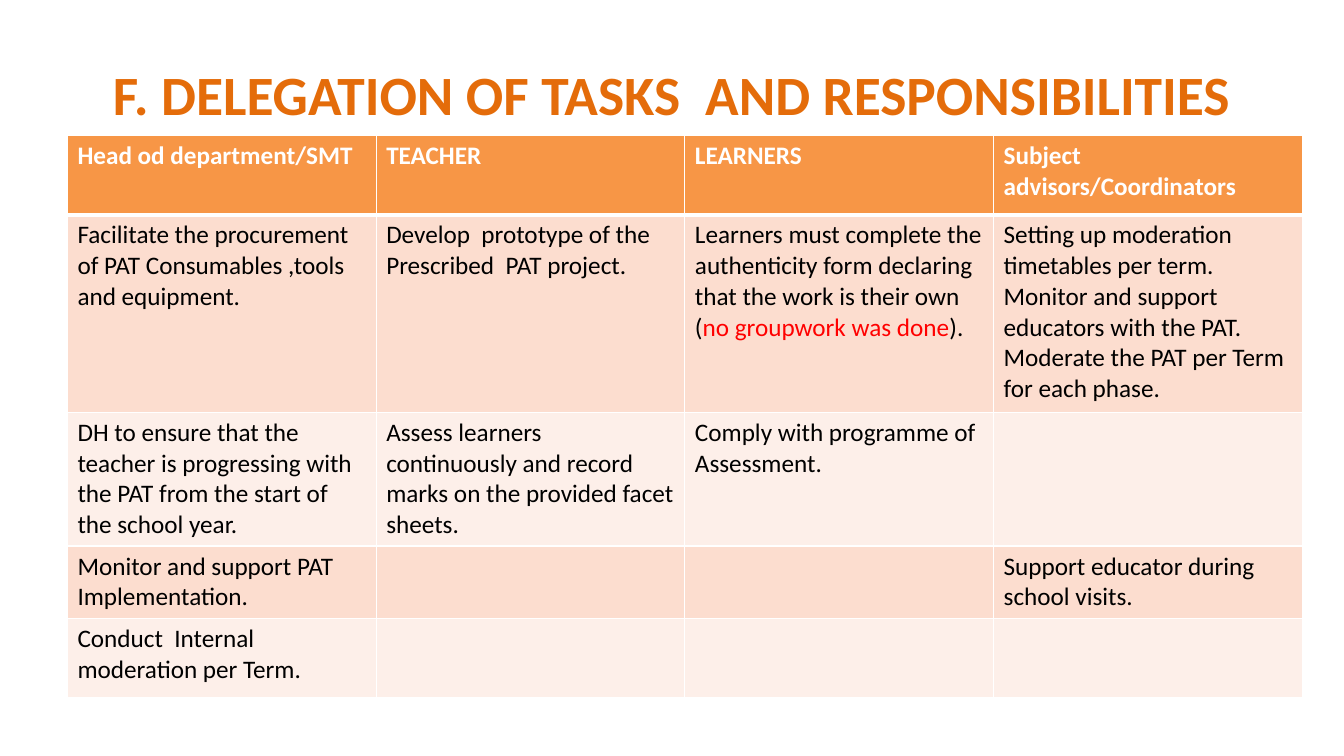
from dataclasses import dataclass

from lxml import etree
from pptx import Presentation
from pptx.dml.color import RGBColor
from pptx.enum.text import MSO_ANCHOR, PP_ALIGN
from pptx.oxml.ns import qn
from pptx.util import Cm, Pt

CENTER = PP_ALIGN.CENTER
MIDDLE = MSO_ANCHOR.MIDDLE
BLANK_LAYOUT = 6

TITLE = "F. DELEGATION OF TASKS  AND RESPONSIBILITIES"
ROLES = ["Head od department/SMT", "TEACHER", "LEARNERS", "Subject advisors/Coordinators"]
DUTIES = [
    [
        "Facilitate the procurement of PAT Consumables ,tools and equipment.",
        "Develop  prototype of the\nPrescribed  PAT project.",
        "Learners must complete the authenticity form declaring that the work is "
        "their own (|no groupwork was done|).",
        "Setting up moderation timetables per term.\n"
        "Monitor and support educators with the PAT.\n"
        "Moderate the PAT per Term for each phase.",
    ],
    [
        "DH to ensure that the teacher is progressing with the PAT from the start "
        "of the school year.",
        "Assess learners continuously and record marks on the provided facet sheets.",
        "Comply with programme of  Assessment.",
        "",
    ],
    ["Monitor and support PAT Implementation.", "", "", "Support educator during school visits."],
    ["Conduct  Internal moderation per Term.", "", "", ""],
]
ROW_HEIGHTS = [2, 4.98, 3.37, 1.82, 2]
COLUMN_WIDTH = 7.78


@dataclass(frozen=True)
class Theme:
    """Fonts, type sizes, line widths and colours of the slide."""

    font: str = "Calibri"
    title_size: float = 39.6
    table_size: float = 18
    rule: float = 1
    header_rule: float = 3
    title: str = "E46C0A"
    header: str = "F79646"
    bands: tuple = ("FCDDCF", "FDEFE9")
    light: str = "FFFFFF"
    ink: str = "000000"
    alert: str = "FF0000"


class SlideBuilder:
    """Draws styled elements on the current slide."""

    def __init__(self, slide, theme):
        self.slide = slide
        self.theme = theme

    def style(self, run, size, color, bold=False):
        """Format one run of text."""
        run.font.name = self.theme.font
        run.font.size = Pt(size)
        run.font.bold = bold
        run.font.color.rgb = RGBColor.from_string(color)

    def title(self, text, left, top, width, height):
        """Place the centred slide heading."""
        box = self.slide.shapes.add_textbox(Cm(left), Cm(top), Cm(width), Cm(height))
        frame = box.text_frame
        frame.word_wrap = True
        frame.vertical_anchor = MIDDLE
        frame.text = text
        heading = frame.paragraphs[0]
        heading.alignment = CENTER
        self.style(heading.runs[0], self.theme.title_size, self.theme.title, True)

    def border(self, cell, side, width):
        """Rule one side of a cell."""
        line = etree.SubElement(cell._tc.get_or_add_tcPr(), qn(f"a:ln{side}"), w=str(Pt(width)))
        fill = etree.SubElement(line, qn("a:solidFill"))
        etree.SubElement(fill, qn("a:srgbClr"), val=self.theme.light)

    def cell(self, cell, text, fill, color, bold, top_rule, bottom_rule):
        """Fill a cell, with text between bars in the alert colour."""
        theme = self.theme
        rules = {"L": theme.rule, "R": theme.rule, "T": top_rule, "B": bottom_rule}
        for side, width in rules.items():
            self.border(cell, side, width)
        cell.fill.solid()
        cell.fill.fore_color.rgb = RGBColor.from_string(fill)
        cell.text_frame.text = text.replace("|", "")
        for paragraph, words in zip(cell.text_frame.paragraphs, text.split("\n")):
            opening, *rest = words.split("|")
            paragraph.text = opening
            for part in rest:
                paragraph.add_run().text = part
            for index, run in enumerate(paragraph.runs):
                self.style(run, theme.table_size, theme.alert if index % 2 else color, bold)

    def table(self, header, body, left, top, column_width, row_heights):
        """Place a table with a strong header and banded rows."""
        theme = self.theme
        frame = self.slide.shapes.add_table(
            len(row_heights), len(header), Cm(left), Cm(top),
            Cm(column_width * len(header)), Cm(sum(row_heights)))
        grid = frame.table
        for column in grid.columns:
            column.width = Cm(column_width)
        for row, height in zip(grid.rows, row_heights):
            row.height = Cm(height)
        for column, role in enumerate(header):
            self.cell(grid.cell(0, column), role, theme.header, theme.light, True,
                      theme.rule, theme.header_rule)
        for row, duties in enumerate(body, start=1):
            band = theme.bands[(row - 1) % 2]
            top_rule = theme.header_rule if row == 1 else theme.rule
            for column, duty in enumerate(duties):
                self.cell(grid.cell(row, column), duty, band, theme.ink, False,
                          top_rule, theme.rule)


def main():
    """Build and save the presentation."""
    deck = Presentation()
    deck.slide_width, deck.slide_height = Cm(33.87), Cm(19.05)
    slide = deck.slides.add_slide(deck.slide_layouts[BLANK_LAYOUT])
    builder = SlideBuilder(slide, Theme())
    builder.title(TITLE, 1.69, 0.76, 30.48, 3.18)
    builder.table(ROLES, DUTIES, 1.7, 3.41, COLUMN_WIDTH, ROW_HEIGHTS)
    deck.save("out.pptx")


if __name__ == "__main__":
    main()
